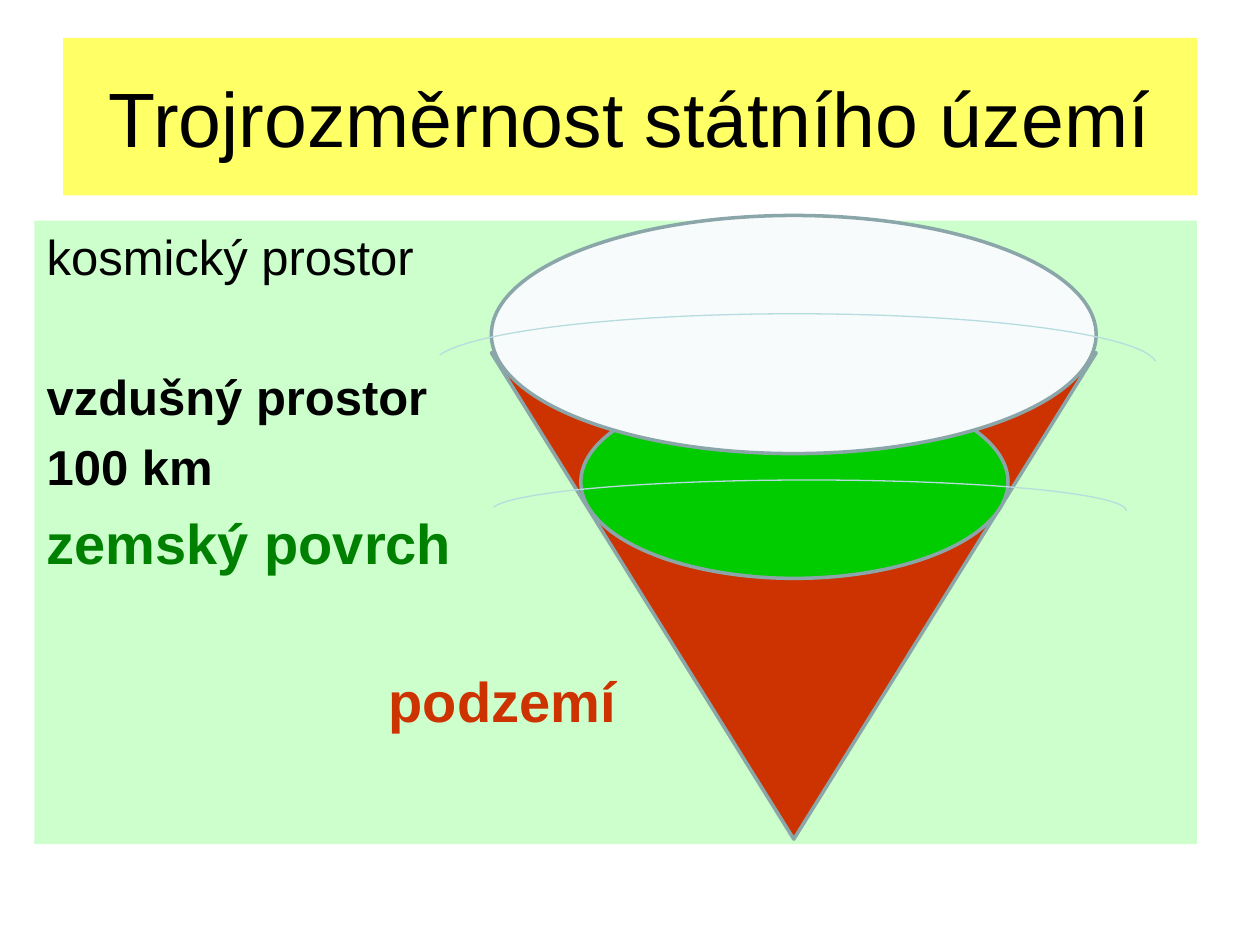
from dataclasses import dataclass

from pptx import Presentation
from pptx.dml.color import RGBColor
from pptx.enum.shapes import MSO_SHAPE as Shape
from pptx.enum.text import MSO_ANCHOR as Anchor, PP_ALIGN as Align
from pptx.util import Pt


@dataclass(frozen=True)
class Theme:
    font: str = "Arial"
    title_size: int = 44
    large: int = 32
    normal: int = 28
    text: str = "000000"
    title_fill: str = "FFFF66"
    panel: str = "CCFFCC"
    underground: str = "CC3300"
    surface: str = "00CC00"
    surface_text: str = "008000"
    airspace: str = "F8FBFC"
    outline: str = "8AA6A8"
    horizon: str = "B6DCDF"


def paint(target, color):
    target.fill.solid()
    target.fill.fore_color.rgb = RGBColor.from_string(color)


class SlideBuilder:
    def __init__(self, deck, theme):
        self.theme = theme
        self.slide = deck.slides.add_slide(deck.slide_layouts[5])

    def place(self, item, left, top, width, height):
        item.left, item.top = Pt(left), Pt(top)
        item.width, item.height = Pt(width), Pt(height)

    def add_span(self, para, text, size, color, bold=False):
        span = para.add_run()
        span.text = text
        span.font.name = self.theme.font
        span.font.size = Pt(size)
        span.font.bold = bold
        span.font.color.rgb = RGBColor.from_string(color)

    def title(self, text, bounds):
        box = self.slide.shapes.title
        self.place(box, *bounds)
        paint(box, self.theme.title_fill)
        box.text_frame.vertical_anchor = Anchor.MIDDLE
        para = box.text_frame.paragraphs[0]
        para.alignment = Align.CENTER
        self.add_span(para, text, self.theme.title_size, self.theme.text)

    def panel(self, lines, bounds):
        """Each line is (text, size, color, bold, space before, left indent)."""
        box = self.slide.shapes.add_textbox(*map(Pt, bounds))
        paint(box, self.theme.panel)
        frame = box.text_frame
        frame.word_wrap = True
        for index, (text, size, color, bold, gap, indent) in enumerate(lines):
            para = frame.add_paragraph() if index else frame.paragraphs[0]
            if gap:
                para.space_before = Pt(gap)
            if indent:
                para._p.get_or_add_pPr().set("marL", str(Pt(indent)))
            self.add_span(para, text, size, color, bold)

    def outlined(self, kind, bounds, line, weight, fill=None):
        shape = self.slide.shapes.add_shape(kind, *map(Pt, bounds))
        shape.shadow.inherit = False
        if fill:
            paint(shape, fill)
        else:
            shape.fill.background()
        shape.line.color.rgb = RGBColor.from_string(line)
        shape.line.width = Pt(weight)
        return shape

    def solid(self, kind, bounds, fill):
        return self.outlined(kind, bounds, self.theme.outline, 2, fill)

    def horizon(self, bounds, start, end):
        """Draw an arc; angles are in units of 100000/60000 degrees."""
        arc = self.outlined(Shape.ARC, bounds, self.theme.horizon, 0.75)
        arc.adjustments[0] = start
        arc.adjustments[1] = end


def main():
    theme = Theme()
    deck = Presentation()
    deck.slide_width, deck.slide_height = Pt(720), Pt(540)
    page = SlideBuilder(deck, theme)

    page.title("Trojrozměrnost státního území", (36, 21.6, 648, 90))
    page.panel([
        ("kosmický prostor", theme.normal, theme.text, False, 0, 0),
        ("vzdušný prostor", theme.normal, theme.text, True, 46, 0),
        ("100 km", theme.normal, theme.text, True, 6.5, 0),
        ("zemský povrch", theme.large, theme.surface_text, True, 7.5, 0),
        ("podzemí", theme.large, theme.underground, True, 52, 195.5),
    ], (19.6, 126, 664.4, 356.4))

    cone = page.solid(Shape.ISOSCELES_TRIANGLE, (280.8, 201.6, 345.6, 277.9),
                      theme.underground)
    cone.rotation = 180
    page.solid(Shape.OVAL, (331.9, 220.3, 244.1, 110.2), theme.surface)
    page.solid(Shape.OVAL, (280.8, 123.1, 345.6, 136.1), theme.airspace)
    page.horizon((280.8, 274.3, 362.9, 35.3), 108.4, 0)
    page.horizon((247, 179.3, 414, 59), 109.01, 215.6)

    deck.save("out.pptx")


if __name__ == "__main__":
    main()
